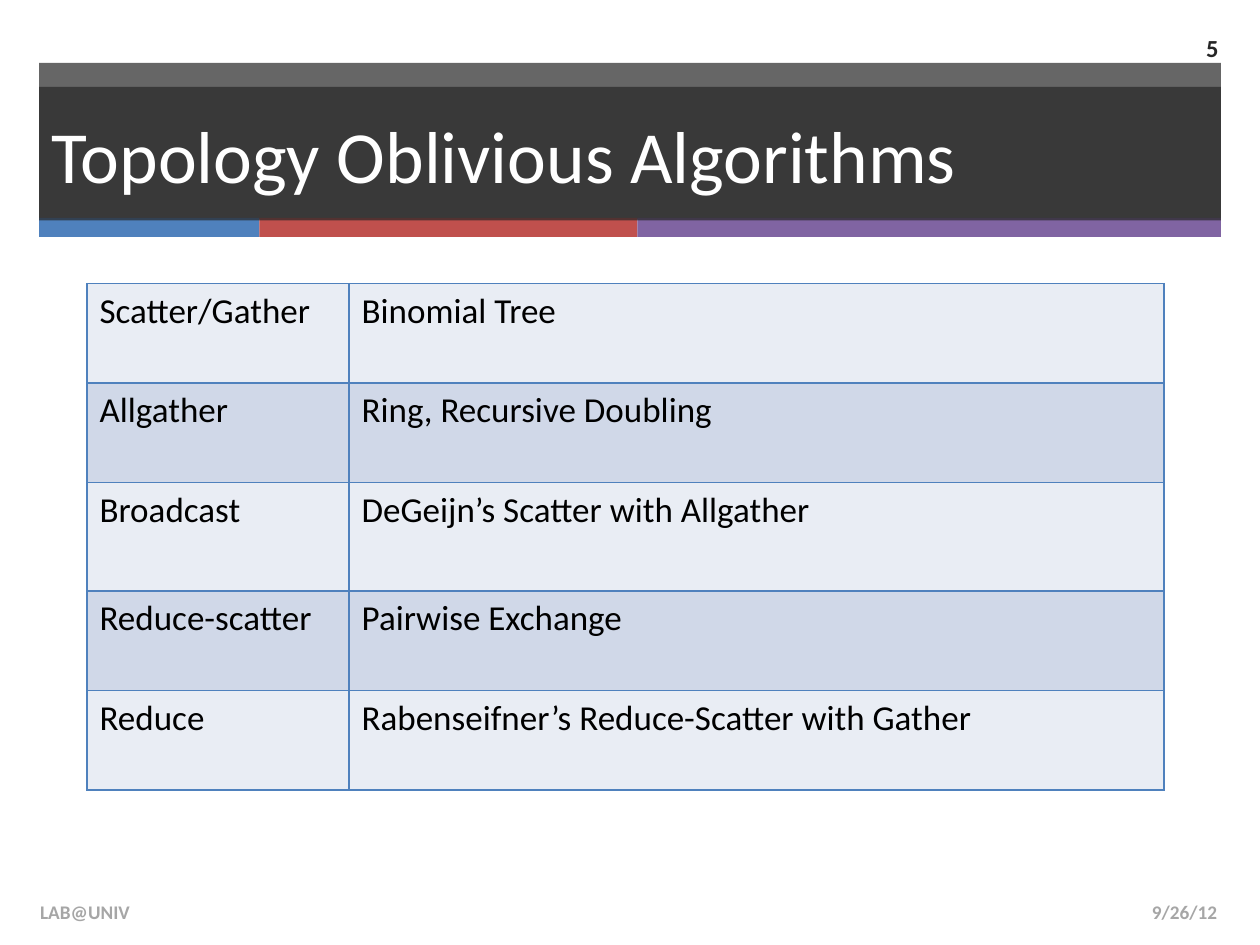
from lxml.etree import SubElement
from pptx import Presentation
from pptx.dml.color import RGBColor
from pptx.enum.shapes import MSO_SHAPE
from pptx.enum.text import MSO_ANCHOR, PP_ALIGN
from pptx.oxml.ns import qn
from pptx.util import Inches, Pt

FONT = "Calibri"
WHITE = RGBColor(0xFF, 0xFF, 0xFF)
BLACK = RGBColor(0x00, 0x00, 0x00)
CHARCOAL = RGBColor(0x26, 0x26, 0x26)
GREY = RGBColor(0xA6, 0xA6, 0xA6)
BLUE = RGBColor(0x4F, 0x81, 0xBD)
RED = RGBColor(0xC0, 0x50, 0x4D)
PURPLE = RGBColor(0x80, 0x64, 0xA2)
ROW_FILLS = (RGBColor(0xE9, 0xED, 0xF4), RGBColor(0xD0, 0xD8, 0xE8))

BAND_LEFT, BAND_WIDTH = 0.31, 9.38
STRIPES = [(1.75, BLUE), (3, RED), (4.63, PURPLE)]
COLUMN_WIDTHS = [2.08, 6.47]
ROW_HEIGHTS = [0.79, 0.79, 0.86, 0.79, 0.79]
ALGORITHMS = [
    ("Scatter/Gather", "Binomial Tree"),
    ("Allgather", "Ring, Recursive Doubling"),
    ("Broadcast", "DeGeijn’s Scatter with Allgather"),
    ("Reduce-scatter", "Pairwise Exchange"),
    ("Reduce", "Rabenseifner’s Reduce-Scatter with Gather"),
]


class SlidePainter:
    """Holds the font and the current slide, and adds elements to it."""

    def __init__(self, slide, font):
        self.slide = slide
        self.font = font

    def set_text(self, frame, text, size, color, bold=False, align=PP_ALIGN.LEFT):
        paragraph = frame.paragraphs[0]
        paragraph.text = text
        paragraph.alignment = align
        paragraph.font.name = self.font
        paragraph.font.size = Pt(size)
        paragraph.font.bold = bold
        paragraph.font.color.rgb = color

    def bar(self, left, top, width, height, color, opacity=100):
        shape = self.slide.shapes.add_shape(
            MSO_SHAPE.RECTANGLE, Inches(left), Inches(top), Inches(width), Inches(height))
        shape.shadow.inherit = False
        shape.line.fill.background()
        shape.fill.solid()
        shape.fill.fore_color.rgb = color
        if opacity < 100:
            color_node = shape.element.spPr.find(".//" + qn("a:srgbClr"))
            SubElement(color_node, qn("a:alpha"), val=str(opacity * 1000))
        return shape

    def label(self, left, top, width, height, text, size, color, align=PP_ALIGN.LEFT):
        box = self.slide.shapes.add_textbox(
            Inches(left), Inches(top), Inches(width), Inches(height))
        box.text_frame.word_wrap = True
        box.text_frame.vertical_anchor = MSO_ANCHOR.MIDDLE
        self.set_text(box.text_frame, text, size, color, True, align)

    def outline_cell(self, cell, color):
        properties = cell._tc.get_or_add_tcPr()
        for position, side in enumerate(("a:lnL", "a:lnR", "a:lnT", "a:lnB")):
            line = SubElement(properties, qn(side), w=str(Pt(1)))
            fill = SubElement(line, qn("a:solidFill"))
            SubElement(fill, qn("a:srgbClr"), val=str(color))
            properties.insert(position, line)

    def table(self, left, top, widths, heights, rows):
        table = self.slide.shapes.add_table(
            len(rows), len(widths), Inches(left), Inches(top),
            Inches(sum(widths)), Inches(sum(heights))).table
        table.first_row = False
        table.horz_banding = False
        for column, width in zip(table.columns, widths):
            column.width = Inches(width)
        for index, (row, height, texts) in enumerate(zip(table.rows, heights, rows)):
            row.height = Inches(height)
            for cell, text in zip(row.cells, texts):
                cell.fill.solid()
                cell.fill.fore_color.rgb = ROW_FILLS[index % 2]
                self.outline_cell(cell, BLUE)
                self.set_text(cell.text_frame, text, 20, BLACK)


def main():
    deck = Presentation()
    deck.slide_width, deck.slide_height = Inches(10), Inches(7.5)
    page = SlidePainter(deck.slides.add_slide(deck.slide_layouts[6]), FONT)

    # Header band with coloured stripes
    page.bar(BAND_LEFT, 0.5, BAND_WIDTH, 1.24, CHARCOAL, 70)
    stripe_left = BAND_LEFT
    for width, color in STRIPES:
        page.bar(stripe_left, 1.73, width, 0.15, color)
        stripe_left += width

    # Title
    title = page.bar(BAND_LEFT, 0.69, BAND_WIDTH, 1.06, CHARCOAL, 70)
    title.text_frame.vertical_anchor = MSO_ANCHOR.MIDDLE
    page.set_text(title.text_frame, "Topology Oblivious Algorithms", 42, WHITE)

    # Algorithms by collective operation
    page.table(0.69, 2.25, COLUMN_WIDTHS, ROW_HEIGHTS, ALGORITHMS)

    # Footer and page number
    page.label(7.43, 7.04, 2.33, 0.4, "9/26/12", 11, GREY, PP_ALIGN.RIGHT)
    page.label(0.22, 7.04, 6.7, 0.4, "LAB@UNIV", 11, GREY)
    page.label(9.08, 0.18, 0.69, 0.39, "5", 14, CHARCOAL, PP_ALIGN.RIGHT)

    deck.save("out.pptx")


if __name__ == "__main__":
    main()
